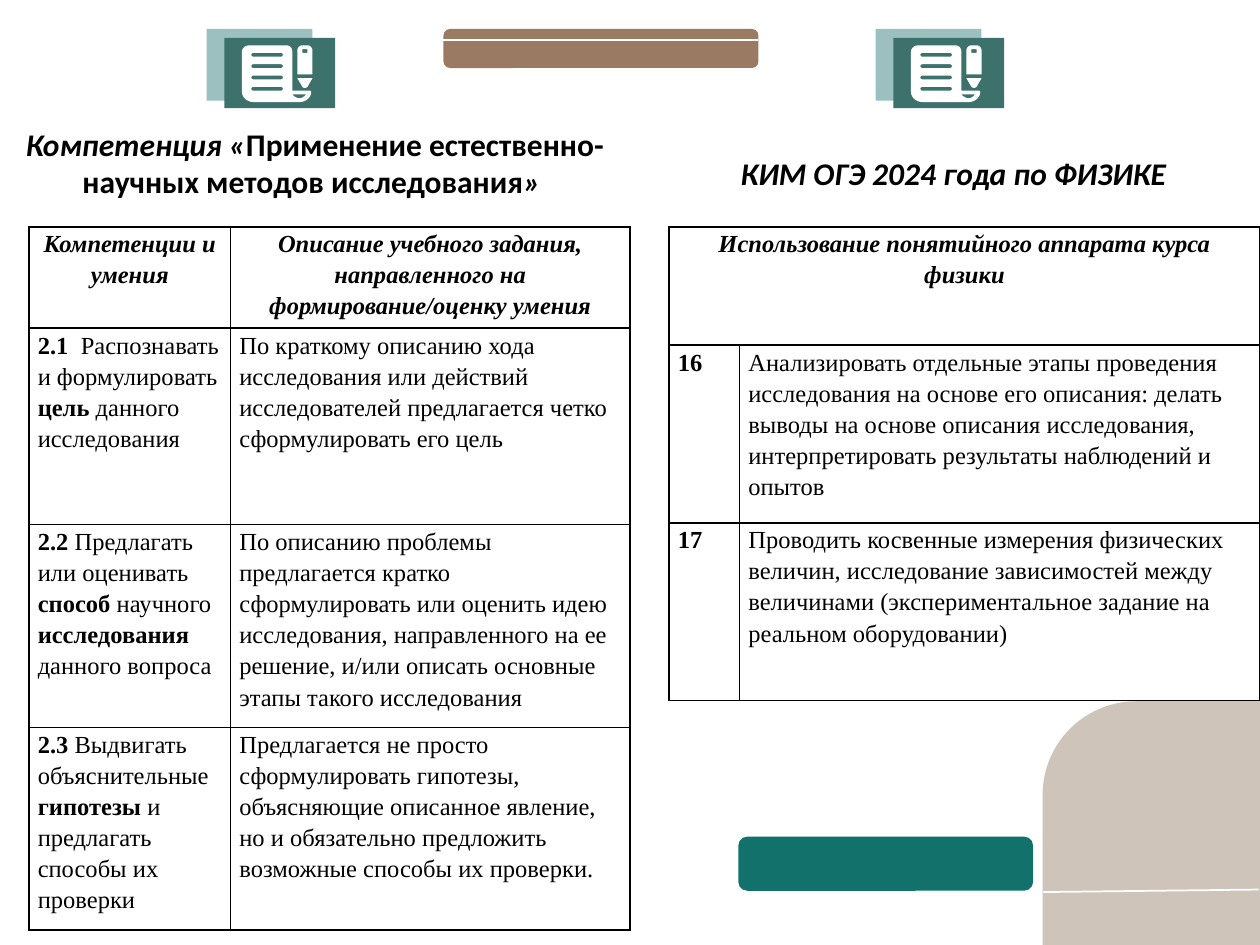
from dataclasses import dataclass
from typing import NamedTuple, Optional

import lxml.etree
import pptx
import pptx.dml.color
import pptx.enum.shapes
import pptx.enum.text
import pptx.oxml
import pptx.oxml.ns
import pptx.util

Inches = pptx.util.Inches
Shape = pptx.enum.shapes.MSO_SHAPE
Align = pptx.enum.text.PP_ALIGN
qn = pptx.oxml.ns.qn


@dataclass(frozen=True)
class Theme:
    ink: str = "000000"
    white: str = "FFFFFF"
    sand: str = "CEC4BA"
    brown: str = "9A7A63"
    teal: str = "12716B"
    icon_back: str = "9CC0C0"
    icon_front: str = "3D716C"
    title_font: str = "Calibri"
    table_font: str = "Times New Roman"
    title_size: int = 18
    table_size: int = 14
    line_width: int = 1
    line_spacing: float = 1.15


class Box(NamedTuple):
    left: float
    top: float
    width: float
    height: float

    def lengths(self) -> list:
        return [Inches(value) for value in self]


class Run(NamedTuple):
    text: str
    bold: bool = False
    italic: bool = False


@dataclass(frozen=True)
class Grid:
    left: float
    top: float
    columns: list
    rows: list
    cells: list


THEME = Theme()


def rgb(value: str) -> pptx.dml.color.RGBColor:
    return pptx.dml.color.RGBColor.from_string(value)


def paint(shape, color: str) -> None:
    shape.shadow.inherit = False
    shape.fill.solid()
    shape.fill.fore_color.rgb = rgb(color)
    shape.line.fill.background()


def add_block(shapes, kind, box: Box, color: str):
    block = shapes.add_shape(kind, *box.lengths())
    paint(block, color)
    return block


def add_rule(shapes, start: tuple, end: tuple) -> None:
    rule = shapes.add_connector(pptx.enum.shapes.MSO_CONNECTOR.STRAIGHT,
                                *map(Inches, start + end))
    rule.line.color.rgb = rgb(THEME.white)
    rule.line.width = pptx.util.Pt(THEME.line_width)
    lxml.etree.SubElement(rule._element.spPr, qn("a:effectLst"))


def flatten(contour: list, steps: int = 8) -> list:
    """Turn points and (x1, y1, x2, y2, x, y) Bezier curves into plain points."""
    points = []
    for node in contour:
        if len(node) == 2:
            points.append(node)
            continue
        ends = [points[-1], node[:2], node[2:4], node[4:]]
        for step in range(1, steps + 1):
            t = step / steps
            weights = ((1 - t) ** 3, 3 * t * (1 - t) ** 2, 3 * t * t * (1 - t), t ** 3)
            points.append(tuple(sum(w * p[axis] for w, p in zip(weights, ends))
                                for axis in (0, 1)))
    return points


def add_outline(shapes, left: float, top: float, contours: list) -> None:
    builder = None
    for contour in contours:
        first, *rest = [(Inches(left + x), Inches(top + y)) for x, y in flatten(contour)]
        if builder is None:
            builder = shapes.build_freeform(*first)
        else:
            builder.move_to(*first)
        builder.add_line_segments(rest, close=True)
    paint(builder.convert_to_shape(), THEME.white)


def text_slot(y: float) -> list:
    return [(0.37, y), (0.59, y), (0.61, y, 0.61, y + 0.03, 0.59, y + 0.03),
            (0.37, y + 0.03), (0.35, y + 0.03, 0.35, y, 0.37, y)]


SCROLL = [
    [(0.34, 0.13), (0.31, 0.13, 0.28, 0.15, 0.28, 0.18), (0.28, 0.5),
     (0.28, 0.54, 0.32, 0.58, 0.37, 0.58), (0.74, 0.58),
     (0.79, 0.58, 0.83, 0.54, 0.83, 0.5), (0.83, 0.49, 0.82, 0.49, 0.81, 0.49),
     (0.68, 0.49), (0.68, 0.18), (0.68, 0.15, 0.66, 0.13, 0.63, 0.13)],
    [(0.79, 0.52), (0.78, 0.53, 0.76, 0.55, 0.74, 0.55),
     (0.71, 0.55, 0.69, 0.53, 0.68, 0.52)],
    *[text_slot(0.19 + 0.09 * line) for line in range(4)],
]
PEN_TIP = [[(0.72, 0.39), (0.76, 0.46), (0.77, 0.47, 0.79, 0.47, 0.8, 0.46), (0.84, 0.39)]]
PEN_BODY = [
    [(0.76, 0.13), (0.74, 0.13, 0.72, 0.15, 0.72, 0.17), (0.72, 0.36), (0.84, 0.36),
     (0.84, 0.17), (0.84, 0.15, 0.82, 0.13, 0.8, 0.13)],
    [(0.76, 0.16), (0.8, 0.16), (0.8, 0.19), (0.76, 0.19)],
]


def add_icon(shapes, left: float, top: float) -> None:
    icon = shapes.add_group_shape().shapes
    add_block(icon, Shape.RECTANGLE, Box(left, top, 0.84, 0.57), THEME.icon_back)
    add_block(icon, Shape.RECTANGLE, Box(left + 0.14, top + 0.07, 0.88, 0.56), THEME.icon_front)
    for contours in (SCROLL, PEN_TIP, PEN_BODY):
        add_outline(icon, left, top, contours)


def write(paragraph, runs: list, font: str, size: int) -> None:
    for part in runs:
        run = paragraph.add_run()
        run.text = part.text
        run.font.name = font
        run.font.size = pptx.util.Pt(size)
        run.font.bold = part.bold
        run.font.italic = part.italic
        run.font.color.rgb = rgb(THEME.ink)


def add_title(shapes, box: Box, runs: list, wrap: bool, align: Optional[Align] = None) -> None:
    frame = shapes.add_textbox(*box.lengths()).text_frame
    frame.word_wrap = wrap
    frame.auto_size = pptx.enum.text.MSO_AUTO_SIZE.SHAPE_TO_FIT_TEXT
    frame.paragraphs[0].alignment = align
    write(frame.paragraphs[0], runs, THEME.title_font, THEME.title_size)


def style_cell(cell) -> None:
    cell.margin_left = cell.margin_right = Inches(0.07)
    cell.margin_top = cell.margin_bottom = 0
    properties = cell._tc.get_or_add_tcPr()
    for side in ("a:lnL", "a:lnR", "a:lnT", "a:lnB"):
        border = lxml.etree.SubElement(properties, qn(side), w=str(pptx.util.Pt(THEME.line_width)))
        fill = lxml.etree.SubElement(border, qn("a:solidFill"))
        lxml.etree.SubElement(fill, qn("a:srgbClr"), val=THEME.ink)
    cell.fill.background()


def add_grid(shapes, grid: Grid) -> None:
    """Draw a table; a row with fewer cells than columns is merged across."""
    box = Box(grid.left, grid.top, sum(grid.columns), sum(grid.rows))
    table = shapes.add_table(len(grid.rows), len(grid.columns), *box.lengths()).table
    table.first_row = table.horz_banding = False
    for column, width in zip(table.columns, grid.columns):
        column.width = Inches(width)
    for index, (height, contents) in enumerate(zip(grid.rows, grid.cells)):
        table.rows[index].height = Inches(height)
        for column in range(len(grid.columns)):
            style_cell(table.cell(index, column))
        if len(contents) < len(grid.columns):
            table.cell(index, 0).merge(table.cell(index, len(grid.columns) - 1))
        for column, runs in enumerate(contents):
            paragraph = table.cell(index, column).text_frame.paragraphs[0]
            paragraph.line_spacing = THEME.line_spacing
            if index == 0:
                paragraph.alignment = Align.CENTER
            write(paragraph, runs, THEME.table_font, THEME.table_size)


EXAM = Grid(5.31, 1.8, [0.56, 4.13], [0.94, 1.41, 1.41], [
    [[Run("Использование понятийного аппарата курса физики", True, True)]],
    [[Run("16", True)],
     [Run("Анализировать отдельные этапы проведения исследования на основе его описания: делать "
          "выводы на основе описания исследования, интерпретировать результаты наблюдений и опытов")]],
    [[Run("17", True)],
     [Run("Проводить косвенные измерения физических величин, исследование зависимостей между "
          "величинами (экспериментальное задание на реальном оборудовании)")]],
])
SKILLS = Grid(0.23, 1.8, [1.6, 3.17], [0.78, 1.56, 1.56, 1.3], [
    [[Run("Компетенции и умения", True, True)],
     [Run("Описание учебного задания, направленного на формирование/оценку умения", True, True)]],
    [[Run("2.1  ", True), Run("Распознавать и формулировать "), Run("цель", True),
      Run(" данного исследования")],
     [Run("По краткому описанию хода исследования или действий исследователей предлагается четко "
          "сформулировать его цель")]],
    [[Run("2.2", True), Run(" Предлагать или оценивать "), Run("способ", True),
      Run(" научного "), Run("исследования ", True), Run("данного вопроса")],
     [Run("По описанию проблемы предлагается кратко сформулировать или оценить идею исследования, "
          "направленного на ее решение, и/или описать основные этапы такого исследования")]],
    [[Run("2.3", True), Run(" Выдвигать объяснительные "), Run("гипотезы", True),
      Run(" и предлагать способы их проверки")],
     [Run("Предлагается не просто сформулировать гипотезы, объясняющие описанное явление, но и "
          "обязательно предложить возможные способы их проверки.")]],
])


def main() -> None:
    deck = pptx.Presentation()
    deck.slide_width, deck.slide_height = Inches(10), Inches(7.5)
    shapes = deck.slides.add_slide(deck.slide_layouts[6]).shapes

    corner = add_block(shapes, Shape.ROUND_1_RECTANGLE, Box(8.17, 5.67, 1.94, 1.73), THEME.sand)
    corner.adjustments[0] = 0.43
    corner.rotation = 270
    add_rule(shapes, (8.28, 7.08), (9.99, 7.06))
    add_block(shapes, Shape.ROUNDED_RECTANGLE, Box(5.86, 6.64, 2.34, 0.43), THEME.teal)
    for left in (1.64, 6.95):
        add_icon(shapes, left, 0.23)

    add_grid(shapes, EXAM)
    add_title(shapes, Box(5.78, 1.17, 3.62, 0.4),
              [Run("КИМ ОГЭ 2024 года по ФИЗИКЕ", True, True)], wrap=False)
    add_title(shapes, Box(0, 0.94, 5, 0.71),
              [Run("Компетенция «", True, True),
               Run("Применение естественно-научных методов исследования", True),
               Run("» ", True, True)], wrap=True, align=Align.CENTER)
    add_grid(shapes, SKILLS)

    add_block(shapes, Shape.ROUNDED_RECTANGLE, Box(3.52, 0.23, 2.5, 0.31), THEME.brown)
    add_rule(shapes, (3.52, 0.32), (6.02, 0.32))
    deck.save("out.pptx")


if __name__ == "__main__":
    main()
